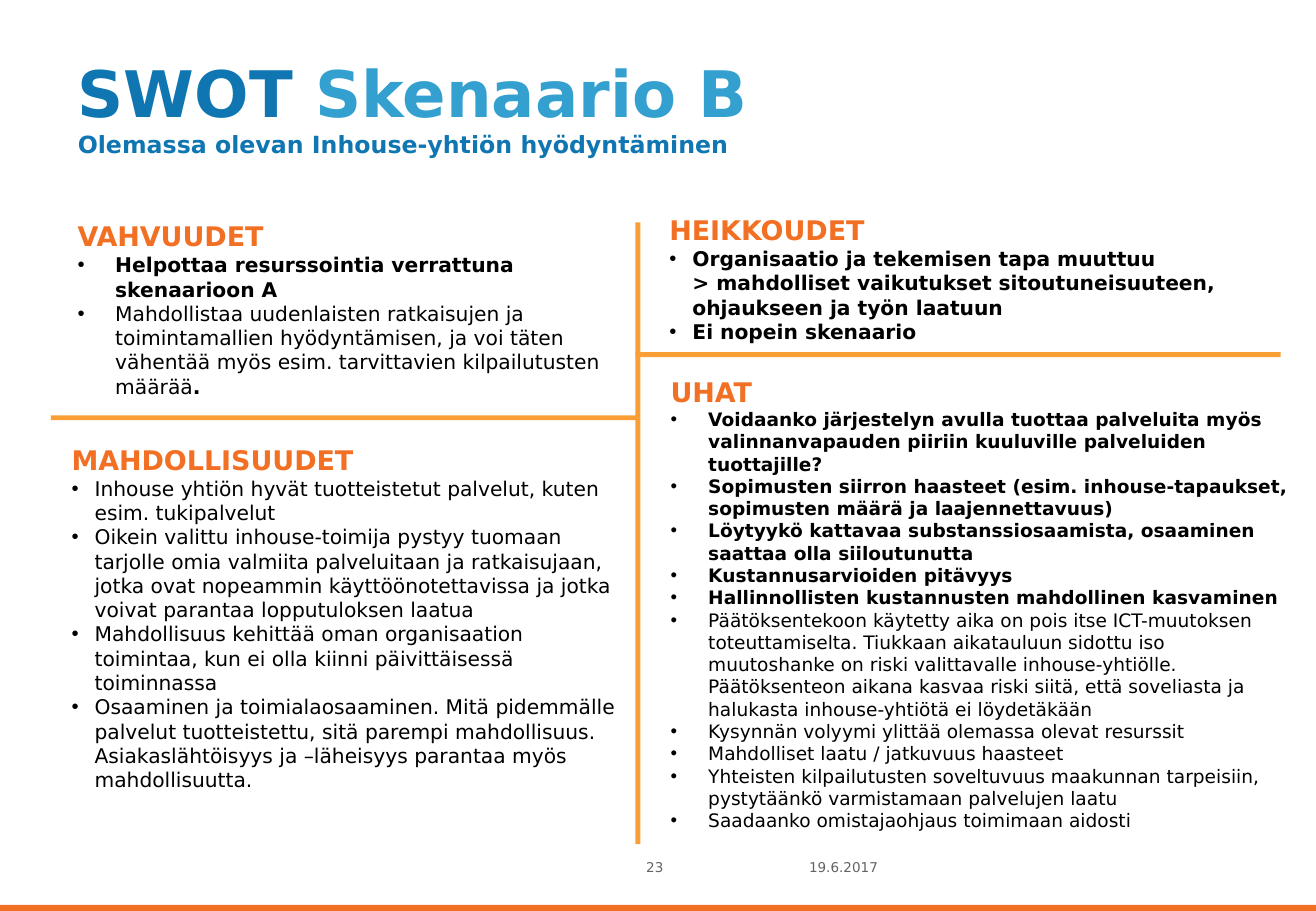
from dataclasses import dataclass

from lxml import etree
from pptx import Presentation
from pptx import util as u
from pptx.dml.color import RGBColor
from pptx.enum import shapes, text
from pptx.oxml.ns import qn


@dataclass(frozen=True)
class Theme:
    font: str = "DejaVu Sans"
    blue: str = "0F76B1"
    sky: str = "34A0CF"
    orange: str = "F27024"
    amber: str = "F99F35"
    white: str = "FFFFFF"
    black: str = "000000"
    gray: str = "616365"
    title: int = 38
    sub: int = 14
    head: int = 16
    body: int = 12
    dense: int = 11
    foot: int = 8


class Deck:
    def __init__(self, theme, wide, high):
        self.theme = theme
        self.prs = Presentation()
        self.prs.slide_width = u.Inches(wide)
        self.prs.slide_height = u.Inches(high)
        self.slide = self.prs.slides.add_slide(self.prs.slide_layouts[5])

    def style(self, font, size, color, bold=False):
        font.name = self.theme.font
        font.size = u.Pt(size)
        font.bold = bold
        font.color.rgb = RGBColor.from_string(color)

    def title(self, box, words, sub):
        t = self.theme
        shape = self.slide.shapes.title
        shape.left, shape.top, shape.width, shape.height = map(u.Inches, box)
        frame = shape.text_frame
        frame.word_wrap = True
        frame.auto_size = text.MSO_AUTO_SIZE.NONE
        frame.vertical_anchor = text.MSO_ANCHOR.MIDDLE
        frame.margin_bottom = u.Inches(0.28)
        first, second = frame.paragraphs[0], frame.add_paragraph()
        for word, color in words:
            run = first.add_run()
            run.text = word
            self.style(run.font, t.title, color, True)
        second.text = sub
        self.style(second.font, t.sub, t.blue, True)
        for para in (first, second):
            para.alignment = text.PP_ALIGN.LEFT

    def bar(self, box, color):
        shape = self.slide.shapes.add_shape(
            shapes.MSO_SHAPE.RECTANGLE, *map(u.Inches, box))
        shape.shadow.inherit = False
        shape.fill.solid()
        shape.fill.fore_color.rgb = RGBColor.from_string(color)
        shape.line.fill.background()
        return shape

    def label(self, box, words):
        frame = self.slide.shapes.add_textbox(*map(u.Inches, box)).text_frame
        frame.word_wrap = True
        para = frame.paragraphs[0]
        para.text = words
        self.style(para.font, self.theme.foot, self.theme.gray)

    def bullet(self, para, indent):
        props = para._p.get_or_add_pPr()
        props.set("marL", str(u.Inches(indent)))
        props.set("indent", str(-u.Inches(indent)))
        etree.SubElement(props, qn("a:buFont")).set("typeface", "Arial")
        etree.SubElement(props, qn("a:buChar")).set("char", "•")

    def panel(self, box, head, items, indent, size, fill=None):
        t = self.theme
        if fill:
            shape = self.bar(box, fill)
        else:
            shape = self.slide.shapes.add_textbox(*map(u.Inches, box))
        frame = shape.text_frame
        frame.word_wrap = True
        frame.vertical_anchor = text.MSO_ANCHOR.TOP
        para = frame.paragraphs[0]
        para.text = head
        para.alignment = text.PP_ALIGN.LEFT
        para.line_spacing = 0.9
        self.style(para.font, t.head, t.orange, True)
        for words, bold in items:
            para = frame.add_paragraph()
            para.alignment = text.PP_ALIGN.LEFT
            self.bullet(para, indent)
            para.text = words
            self.style(para.font, size, t.black, bold)
        return frame


STRONG = [
    ("Helpottaa resurssointia verrattuna skenaarioon A", True),
    ("Mahdollistaa uudenlaisten ratkaisujen ja toimintamallien hyödyntämisen, "
     "ja voi täten vähentää myös esim. tarvittavien kilpailutusten määrää", False),
]
WEAK = [
    ("Organisaatio ja tekemisen tapa muuttuu \v> mahdolliset vaikutukset "
     "sitoutuneisuuteen, ohjaukseen ja työn laatuun", True),
    ("Ei nopein skenaario", True),
]
CHANCE = [
    ("Inhouse yhtiön hyvät tuotteistetut palvelut, kuten esim. tukipalvelut", False),
    ("Oikein valittu inhouse-toimija pystyy tuomaan tarjolle omia valmiita "
     "palveluitaan ja ratkaisujaan, jotka ovat nopeammin käyttöönotettavissa "
     "ja jotka voivat parantaa lopputuloksen laatua", False),
    ("Mahdollisuus kehittää oman organisaation toimintaa, kun ei olla kiinni "
     "päivittäisessä toiminnassa", False),
    ("Osaaminen ja toimialaosaaminen. Mitä pidemmälle palvelut tuotteistettu, "
     "sitä parempi mahdollisuus. Asiakaslähtöisyys ja –läheisyys parantaa myös "
     "mahdollisuutta.", False),
]
THREAT = [
    ("Voidaanko järjestelyn avulla tuottaa palveluita myös valinnanvapauden "
     "piiriin kuuluville palveluiden tuottajille?", True),
    ("Sopimusten siirron haasteet (esim. inhouse-tapaukset, sopimusten määrä "
     "ja laajennettavuus)", True),
    ("Löytyykö kattavaa substanssiosaamista, osaaminen saattaa olla "
     "siiloutunutta", True),
    ("Kustannusarvioiden pitävyys", True),
    ("Hallinnollisten kustannusten mahdollinen kasvaminen", True),
    ("Päätöksentekoon käytetty aika on pois itse ICT-muutoksen toteuttamiselta. "
     "Tiukkaan aikatauluun sidottu iso muutoshanke on riski valittavalle "
     "inhouse-yhtiölle. Päätöksenteon aikana kasvaa riski siitä, että "
     "soveliasta ja halukasta inhouse-yhtiötä ei löydetäkään", False),
    ("Kysynnän volyymi ylittää olemassa olevat resurssit", False),
    ("Mahdolliset laatu / jatkuvuus haasteet", False),
    ("Yhteisten kilpailutusten soveltuvuus maakunnan tarpeisiin, pystytäänkö "
     "varmistamaan palvelujen laatu", False),
    ("Saadaanko omistajaohjaus toimimaan aidosti", False),
]


def main():
    t = Theme()
    deck = Deck(t, 10.83, 7.5)

    # Footer
    deck.label((6.56, 7.02, 0.96, 0.4), "19.6.2017")
    deck.label((5.22, 7.02, 0.96, 0.4), "23")
    deck.bar((0, 7.45, 10.83, 0.08), t.orange)

    # Title
    deck.title((0.54, 0.3, 9.75, 1.37),
               [("SWOT ", t.blue), ("Skenaario B", t.sky)],
               "Olemassa olevan Inhouse-yhtiön hyödyntäminen")

    # Four SWOT fields
    frame = deck.panel((0.54, 1.79, 4.68, 1.56), "VAHVUUDET", STRONG,
                       0.31, t.body, t.white)
    stop = frame.paragraphs[-1].add_run()
    stop.text = "."
    stop.font.bold = True
    deck.panel((5.41, 1.74, 5.42, 1.15), "HEIKKOUDET", WEAK,
               0.19, t.body, t.white)
    deck.panel((0.49, 3.63, 4.72, 2.97), "MAHDOLLISUUDET", CHANCE, 0.19, t.body)
    deck.panel((5.42, 3.07, 5.31, 3.86), "UHAT", THREAT, 0.31, t.dense)

    # Dividers
    for box in ((5.23, 1.83, 0.04, 5.12),
                (0.42, 3.42, 4.83, 0.04),
                (5.23, 2.9, 5.31, 0.04)):
        deck.bar(box, t.amber)

    deck.prs.save("out.pptx")


if __name__ == "__main__":
    main()
